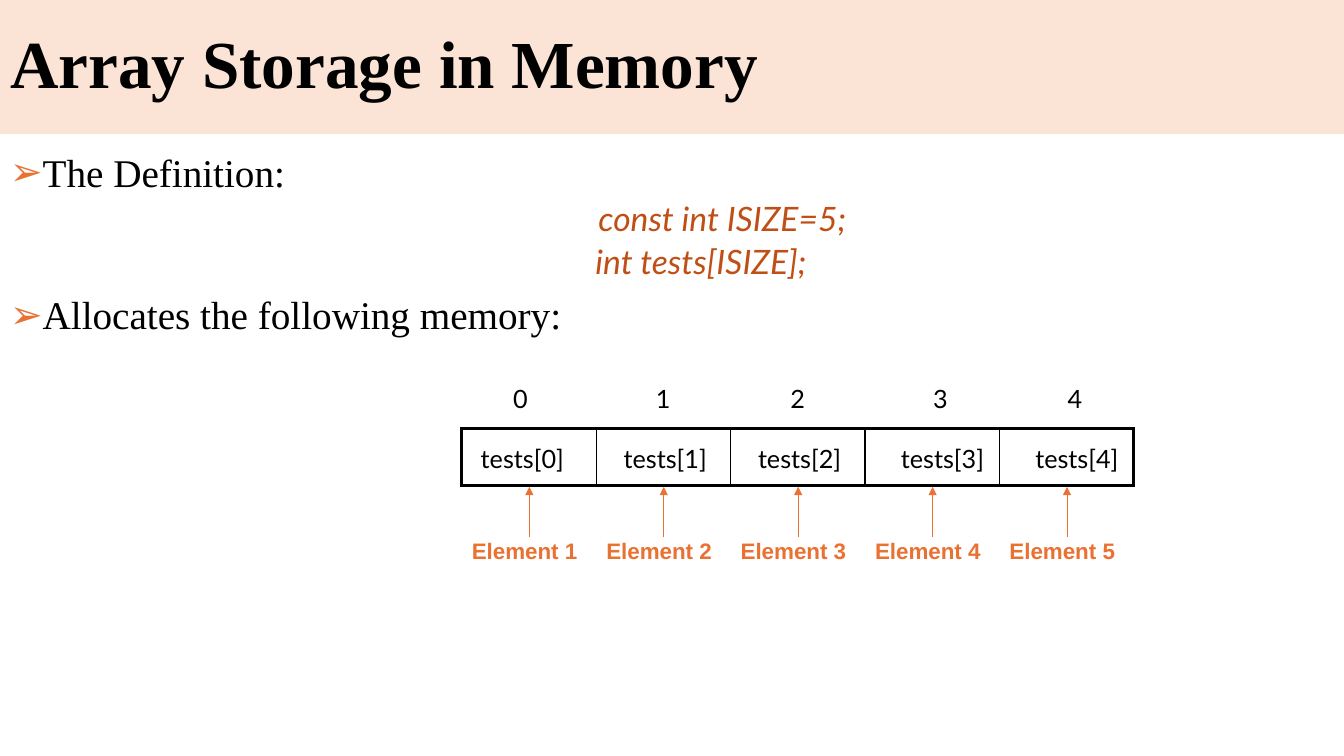
from lxml import etree
from pptx import Presentation
from pptx.dml.color import RGBColor
from pptx.enum.shapes import MSO_CONNECTOR
from pptx.enum.text import MSO_ANCHOR, MSO_AUTO_SIZE, PP_ALIGN
from pptx.oxml.ns import qn
from pptx.util import Inches, Pt

STRAIGHT = MSO_CONNECTOR.STRAIGHT
MIDDLE = MSO_ANCHOR.MIDDLE
NO_FIT, GROW = MSO_AUTO_SIZE.NONE, MSO_AUTO_SIZE.SHAPE_TO_FIT_TEXT
LEFT, CENTER = PP_ALIGN.LEFT, PP_ALIGN.CENTER

BLACK = RGBColor(0x00, 0x00, 0x00)
PEACH = RGBColor(0xFB, 0xE3, 0xD6)
ORANGE = RGBColor(0xE9, 0x71, 0x32)
RUST = RGBColor(0xC0, 0x4F, 0x15)

SERIF, SANS, BODY = "Times New Roman", "Arial", "Lato"
NO_STYLE = "{2D5ABB26-0587-4C30-8999-92F81FD0307C}"
COUNT = 5
ARRAY_LEFT, ARRAY_TOP = 4.58, 4.25
CELL_W, CELL_H = 4 / 3, 0.57
ELEMENTS_TOP, ELEMENTS_H = 5.33, 0.92
ARROW_LEFT, ARROW_TIP = 5.25, 4.83


def add_text(p, text, size=18, font=BODY, color=BLACK, bold=False, italic=False,
             align=LEFT, spacing=None, before=None):
    """Add a formatted run to a paragraph and set the paragraph's layout."""
    p.alignment = align
    if spacing:
        p.line_spacing = spacing
    if before:
        p.space_before = Pt(before)
    r = p.add_run()
    r.text = text
    r.font.size, r.font.name = Pt(size), font
    r.font.bold, r.font.italic = bold, italic
    r.font.color.rgb = color


def set_indent(p, margin, indent=0):
    """Set a paragraph's left margin and first-line indent in inches."""
    pPr = p._p.get_or_add_pPr()
    pPr.set("marL", str(Inches(margin)))
    pPr.set("indent", str(Inches(indent)))
    return pPr


def add_bullet(p, text):
    """Fill a paragraph as a top-level point with an orange arrow bullet."""
    add_text(p, text, size=28, font=SERIF, spacing=0.9, before=10)
    pPr = set_indent(p, 0.25, -0.25)
    color = etree.SubElement(pPr, qn("a:buClr"))
    etree.SubElement(color, qn("a:srgbClr"), val=str(ORANGE))
    etree.SubElement(pPr, qn("a:buFont"), typeface=SANS)
    etree.SubElement(pPr, qn("a:buChar"), char="➢")


def add_code(p, text):
    """Fill a paragraph as a centred line of code."""
    add_text(p, text, size=24, color=RUST, italic=True, align=CENTER,
             spacing=0.9, before=5)
    set_indent(p, 0.5)


def add_title(s, text):
    """Place the title as a full-width band."""
    title = s.shapes.title
    title.left, title.top = Inches(0), Inches(0)
    title.width, title.height = Inches(13.33), Inches(1.33)
    title.fill.solid()
    title.fill.fore_color.rgb = PEACH
    tf = title.text_frame
    tf.auto_size, tf.vertical_anchor = NO_FIT, MIDDLE
    add_text(tf.paragraphs[0], text, size=48, font=SERIF, bold=True, spacing=0.9)


def add_box(s, left, top, width, height, fit=GROW):
    """Add a wrapping text box and return its text frame."""
    tf = s.shapes.add_textbox(Inches(left), Inches(top),
                              Inches(width), Inches(height)).text_frame
    tf.word_wrap, tf.auto_size = True, fit
    return tf


def add_body(s):
    """Add the definition and the lead-in to the memory diagram."""
    tf = add_box(s, 0, 1.47, 13.33, 5.88, NO_FIT)
    lines = [
        (add_bullet, "The Definition:"),
        (add_code, "\tconst int ISIZE=5;"),
        (add_code, " int tests[ISIZE];"),
        (add_bullet, "Allocates the following memory:"),
    ]
    for i, (add_line, text) in enumerate(lines):
        add_line(tf.add_paragraph() if i else tf.paragraphs[0], text)


def add_row(s, top, height):
    """Add a one-row plain table and return its cells."""
    frame = s.shapes.add_table(1, COUNT, Inches(ARRAY_LEFT), Inches(top),
                               Inches(CELL_W * COUNT), Inches(height))
    table = frame.table
    table.first_row = table.horz_banding = False
    table._tbl.tblPr.find(qn("a:tableStyleId")).text = NO_STYLE
    cells = list(table.rows[0].cells)
    for cell in cells:
        cell.fill.background()
    return cells


def set_borders(cell, **widths):
    """Draw black cell borders with the given widths in points."""
    tcPr = cell._tc.get_or_add_tcPr()
    for i, (side, width) in enumerate(widths.items()):
        ln = etree.Element(qn("a:ln" + side), w=str(Pt(width)))
        fill = etree.SubElement(ln, qn("a:solidFill"))
        etree.SubElement(fill, qn("a:srgbClr"), val=str(BLACK))
        tcPr.insert(i, ln)


def add_arrow(s, x, start, end):
    """Add a thin vertical arrow."""
    arrow = s.shapes.add_connector(STRAIGHT, Inches(x), Inches(start),
                                   Inches(x), Inches(end))
    arrow.line.color.rgb = ORANGE
    arrow.line.width = Pt(0.75)
    etree.SubElement(arrow.line._get_or_add_ln(), qn("a:tailEnd"), type="triangle")
    etree.SubElement(arrow._element.spPr, qn("a:effectLst"))


def add_memory(s):
    """Add the array cells with their indexes, names and element numbers."""
    for i, cell in enumerate(add_row(s, ARRAY_TOP, CELL_H)):
        set_borders(cell, L=1 if i else 2.25, R=1 if i < COUNT - 1 else 2.25,
                    T=2.25, B=2.25)
    for i, cell in enumerate(add_row(s, ELEMENTS_TOP, ELEMENTS_H)):
        add_text(cell.text_frame.paragraphs[0], f"Element {i + 1}", size=16,
                 font=SANS, color=ORANGE, bold=True, spacing=0.85, before=3.2)
    for i in range(COUNT):
        add_arrow(s, ARROW_LEFT + i * CELL_W, ELEMENTS_TOP, ARROW_TIP)
        left = 4.67 + i * CELL_W + (i + 1) // 2 / 12
        for text, x, y, width in ((f"tests[{i}]", left, 4.35, 1.17),
                                  (str(i), left + 0.32, 3.75, 0.59)):
            add_text(add_box(s, x, y, width, 0.4).paragraphs[0], text)


def main():
    """Build the slide and save it."""
    prs = Presentation()
    prs.slide_width, prs.slide_height = Inches(13.33), Inches(7.5)
    s = prs.slides.add_slide(prs.slide_layouts[5])
    add_title(s, "Array Storage in Memory")
    add_body(s)
    add_memory(s)
    prs.save("out.pptx")


if __name__ == "__main__":
    main()
